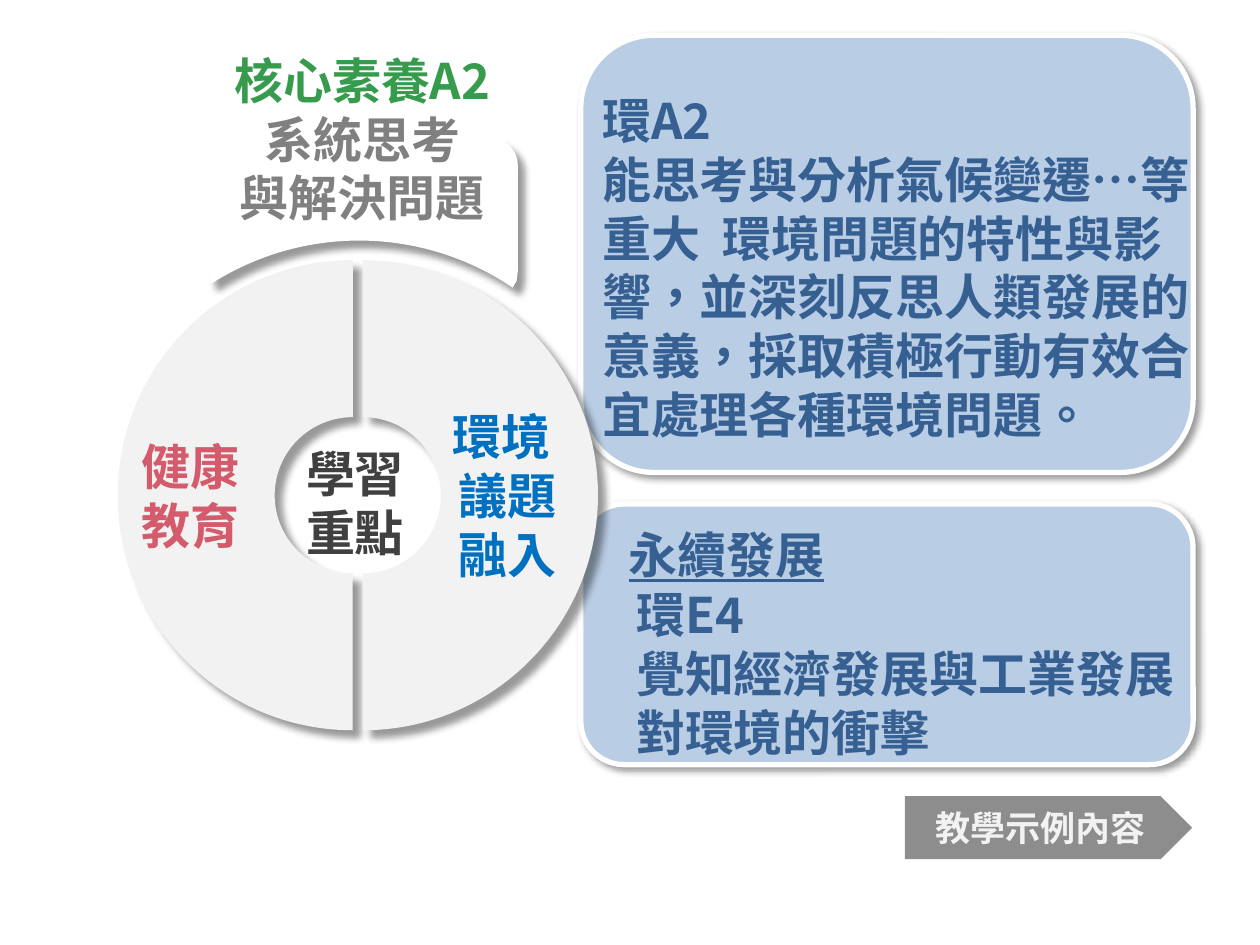
import math
from dataclasses import dataclass

from lxml import etree
from pptx import Presentation
from pptx.dml.color import RGBColor
from pptx.enum import shapes, text
from pptx.oxml.ns import qn
from pptx.util import Pt


@dataclass(frozen=True)
class Theme:
    sc: str = "Noto Sans CJK SC"
    tc: str = "Noto Sans CJK TC"
    body: int = 28
    small: int = 20
    navy: str = "376092"
    panel: str = "B9CDE5"
    white: str = "FFFFFF"
    ring: str = "F2F2F2"
    gray: str = "808080"
    dark: str = "404040"
    rose: str = "D35B6C"
    blue: str = "0070C0"
    green: str = "379B4E"


T = Theme()
LEFT, CENTER = text.PP_ALIGN.LEFT, text.PP_ALIGN.CENTER

PANELS = [(331.9, 288, 349.9, 149), (331.9, 20.2, 349.9, 249.8)]

LABELS = [
    dict(box=(337, 48.2, 356.4, 211), lines=[
        "環A2",
        "能思考與分析氣候變遷…等重大  環境問題的特性與影響，並深刻反思人類發展的意義，採取積極行動有效合宜處理各種環境問題。"]),
    dict(box=(356.4, 330.5, 331.9, 108.7), lines=["環E4", "覺知經濟發展與工業發展對環境的衝擊"]),
    dict(box=(352.1, 295.9, 127.4, 41), lines=["永續發展"], wrap=False, underline=True),
    dict(box=(167.8, 249.8, 71.3, 74.9), lines=["學習", "重點"], wrap=False,
         font=T.tc, colors=[T.dark] * 2),
]
TAG = dict(box=(517, 455, 164.2, 36), line="教學示例內容")
COMPETENCY = dict(box=(60.5, 25.2, 293, 108.7), lines=["核心素養A2", "系統思考", "與解決問題"],
                  colors=[T.green, T.gray, T.gray], align=CENTER)

RING = dict(x=204.5, y=283, outer=134.3, inner=44.6, gap=5.8)
HALVES = [
    dict(side=-1, lines=["健康", "教育"], color=T.rose, align=LEFT, inset=13.5),
    dict(side=1, lines=["環境 ", "議題", "融入"], color=T.blue, align=CENTER, inset=37.5),
]
CALLOUT = dict(left=118.8, right=295.9, top=79.2, corner=15, foot=155)
CALLOUT_ARC = dict(x=205.2, y=294.5, radius=157, start=304, end=237.6)

prs = Presentation()
prs.slide_width, prs.slide_height = Pt(720), Pt(540)
slide = prs.slides.add_slide(prs.slide_layouts[6])


def write(shape, lines, colors, font=T.sc, size=T.body, align=LEFT, underline=None):
    frame = shape.text_frame
    frame.text = "\n".join(lines)
    for paragraph, color in zip(frame.paragraphs, colors):
        paragraph.alignment = align
        for run in paragraph.runs:
            run.font.name, run.font.size = font, Pt(size)
            run.font.bold, run.font.underline = True, underline
            run.font.color.rgb = RGBColor.from_string(color)
            run.font._element.set("lang", "zh-TW")
            etree.SubElement(run.font._element, qn("a:ea"), typeface=font)


def paint(shape, fill, border=None):
    shape.shadow.inherit = False
    shape.fill.solid()
    shape.fill.fore_color.rgb = RGBColor.from_string(fill)
    if border:
        shape.line.color.rgb = RGBColor.from_string(border)
        shape.line.width = Pt(3)
    else:
        shape.line.fill.background()


def cast_shadow(shape, distance, angle=45):
    effects = shape._element.spPr.find(qn("a:effectLst"))
    outer = etree.SubElement(effects, qn("a:outerShdw"), blurRad=str(Pt(4)),
                             dist=str(Pt(distance)), dir=str(angle * 60000),
                             algn="tl", rotWithShape="0")
    black = etree.SubElement(outer, qn("a:srgbClr"), val="000000")
    etree.SubElement(black, qn("a:alpha"), val="40000")


def add_preset(kind, box):
    return slide.shapes.add_shape(kind, *map(Pt, box))


def add_label(box, lines, colors=None, wrap=True, **style):
    label = slide.shapes.add_textbox(*map(Pt, box))
    label.text_frame.word_wrap = wrap
    label.text_frame.auto_size = text.MSO_AUTO_SIZE.SHAPE_TO_FIT_TEXT
    write(label, lines, colors or [T.navy] * len(lines), **style)


def arc(x, y, radius, start, end, pieces=1):
    step = math.radians(end - start) / pieces
    handle = 4 / 3 * math.tan(step / 4)
    curves = []
    for i in range(pieces):
        a = math.radians(start) + i * step
        b = a + step
        curves.append([
            (x + radius * (math.cos(a) - handle * math.sin(a)),
             y + radius * (math.sin(a) + handle * math.cos(a))),
            (x + radius * (math.cos(b) + handle * math.sin(b)),
             y + radius * (math.sin(b) - handle * math.cos(b))),
            (x + radius * math.cos(b), y + radius * math.sin(b))])
    return curves


def add_outline(start, segments, fill):
    builder = slide.shapes.build_freeform(Pt(start[0]), Pt(start[1]), scale=1.0)
    builder.add_line_segments([(Pt(x), Pt(y)) for x, y in (s[-1] for s in segments)], close=True)
    outline = builder.convert_to_shape()
    steps = list(outline._element.iter(qn("a:lnTo")))
    for step, segment in zip(steps, segments):
        if len(segment) == 3:
            curve = etree.Element(qn("a:cubicBezTo"))
            for x, y in segment:
                etree.SubElement(curve, qn("a:pt"), x=str(Pt(x) - outline.left),
                                 y=str(Pt(y) - outline.top))
            step.getparent().replace(step, curve)
    paint(outline, fill)
    return outline


for box in PANELS:
    panel = add_preset(shapes.MSO_SHAPE.ROUNDED_RECTANGLE, box)
    paint(panel, T.panel, T.white)
    cast_shadow(panel, 3)

for label in LABELS:
    add_label(**label)

tag = add_preset(shapes.MSO_SHAPE.PENTAGON, TAG["box"])
paint(tag, T.gray)
tag_color = tag._element.spPr.find(qn("a:solidFill"))[0]
etree.SubElement(tag_color, qn("a:alpha"), val="89000")
tag.text_frame.vertical_anchor = text.MSO_ANCHOR.MIDDLE
write(tag, [TAG["line"]], [T.ring], T.tc, T.small, CENTER)

for half in HALVES:
    side, y = half["side"], RING["y"]
    x = RING["x"] + side * RING["gap"] / 2
    far = -90 + side * 180
    rim = arc(x, y, RING["outer"], -90, far, 2)
    hole = arc(x, y, RING["inner"], far, -90, 2)
    sector = add_outline((x, y - RING["outer"]), rim + [[(x, y + RING["inner"])]] + hole, T.ring)
    cast_shadow(sector, 6)
    sector.text_frame.margin_left = Pt(half["inset"])
    sector.text_frame.vertical_anchor = text.MSO_ANCHOR.MIDDLE
    write(sector, half["lines"], [half["color"]] * len(half["lines"]), T.tc, align=half["align"])

left, right, top, corner, foot = CALLOUT.values()
arc_start = arc(**{**CALLOUT_ARC, "end": CALLOUT_ARC["start"]})[0][-1]
callout_sides = [
    [(right - corner, top)],
    *arc(right - corner, top + corner, corner, 270, 360),
    [(right, foot)],
    [(right - 0.7, foot + 5.6)],
    [arc_start],
    *arc(**CALLOUT_ARC, pieces=2),
    [(left + 1, foot + 5.6)],
    [(left, foot)],
    [(left, top + corner)],
    *arc(left + corner, top + corner, corner, 180, 270),
]
callout = add_outline((left + corner, top), callout_sides, T.white)
cast_shadow(callout, 6, 51)

add_label(**COMPETENCY)

prs.save("out.pptx")
